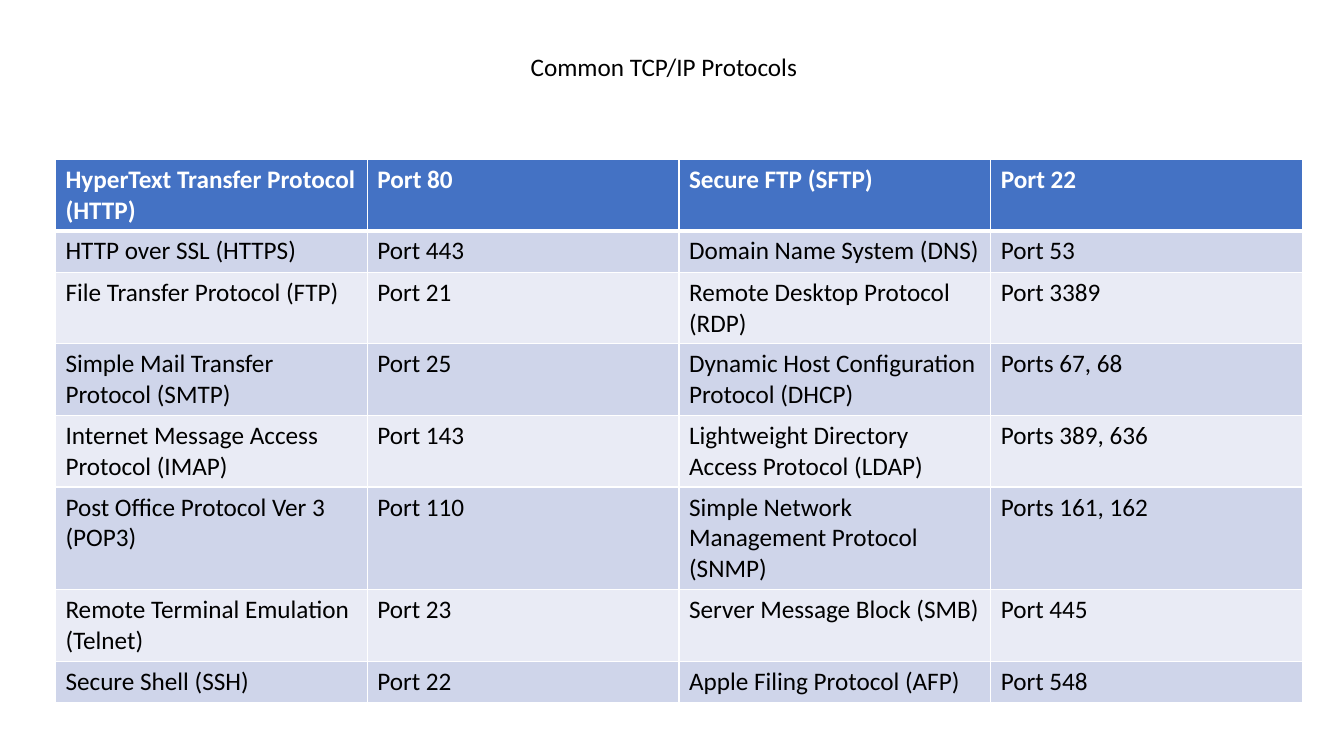
from dataclasses import dataclass

from lxml import etree
from pptx import Presentation
from pptx import util as u
from pptx.dml.color import RGBColor
from pptx.enum import text
from pptx.oxml import ns

PX = 9144  # EMU per px, 100 px to the inch


@dataclass(frozen=True)
class Theme:
    font: str = "Calibri"
    size: int = 18
    ink: str = "000000"
    paper: str = "FFFFFF"
    head: str = "4472C4"
    bands: tuple = ("CFD5EA", "E9EBF5")
    thin: int = 1
    thick: int = 3


ROWS = [
    ("HyperText Transfer Protocol (HTTP)", "Port 80", "Secure FTP (SFTP)", "Port 22"),
    ("HTTP over SSL (HTTPS)", "Port 443", "Domain Name System (DNS)", "Port 53"),
    ("File Transfer Protocol (FTP)", "Port 21", "Remote Desktop Protocol (RDP)", "Port 3389"),
    ("Simple Mail Transfer Protocol (SMTP)", "Port 25",
     "Dynamic Host Configuration Protocol (DHCP)", "Ports 67, 68"),
    ("Internet Message Access Protocol (IMAP)", "Port 143",
     "Lightweight Directory Access Protocol (LDAP)", "Ports 389, 636"),
    ("Post Office Protocol Ver 3 (POP3)", "Port 110",
     "Simple Network Management Protocol (SNMP)", "Ports 161, 162"),
    ("Remote Terminal Emulation (Telnet)", "Port 23", "Server Message Block (SMB)", "Port 445"),
    ("Secure Shell (SSH)", "Port 22", "Apple Filing Protocol (AFP)", "Port 548"),
]


class Deck:
    def __init__(self, theme, width, height):
        self.theme = theme
        self.file = Presentation()
        self.file.slide_width = width * PX
        self.file.slide_height = height * PX
        self.slide = self.file.slides.add_slide(self.file.slide_layouts[5])

    def label(self, frame, words, color, bold=False):
        frame.text = words
        for run in frame.paragraphs[0].runs:
            font = run.font
            font.name, font.size, font.bold = self.theme.font, u.Pt(self.theme.size), bold
            font.color.rgb = RGBColor.from_string(color)

    def title(self, words, left, top, width, height):
        shape = self.slide.shapes.title
        shape.left, shape.top, shape.width, shape.height = (
            n * PX for n in (left, top, width, height))
        frame = shape.text_frame
        self.label(frame, words, self.theme.ink)
        frame.word_wrap = True
        frame.vertical_anchor = text.MSO_ANCHOR.TOP
        frame.paragraphs[0].alignment = text.PP_ALIGN.CENTER

    def edge(self, cell, top, bottom):
        """Rule all four sides of a cell, with widths in points above and below."""
        props = cell._tc.get_or_add_tcPr()
        thin = self.theme.thin
        sides = {"lnL": thin, "lnR": thin, "lnT": top, "lnB": bottom}
        for spot, (side, width) in enumerate(sides.items()):
            line = etree.Element(ns.qn(f"a:{side}"), w=str(u.Pt(width)))
            fill = etree.SubElement(line, ns.qn("a:solidFill"))
            etree.SubElement(fill, ns.qn("a:srgbClr"), val=self.theme.paper)
            props.insert(spot, line)

    def table(self, rows, left, top, width, height):
        look = self.theme
        grid = self.slide.shapes.add_table(
            len(rows), len(rows[0]), left * PX, top * PX, width * PX, height * PX).table
        for r, row in enumerate(rows):
            head = r == 0
            fill = look.head if head else look.bands[(r - 1) % 2]
            for c, words in enumerate(row):
                cell = grid.cell(r, c)
                self.label(cell.text_frame, words, look.paper if head else look.ink, head)
                cell.fill.solid()
                cell.fill.fore_color.rgb = RGBColor.from_string(fill)
                self.edge(cell, look.thick if r == 1 else look.thin,
                          look.thick if head else look.thin)


def main():
    deck = Deck(Theme(), 1333, 750)
    deck.title("Common TCP/IP Protocols", 296, 46, 725, 40)
    deck.table(ROWS, 55, 158, 1237, 8 * 41)
    deck.file.save("out.pptx")


if __name__ == "__main__":
    main()
